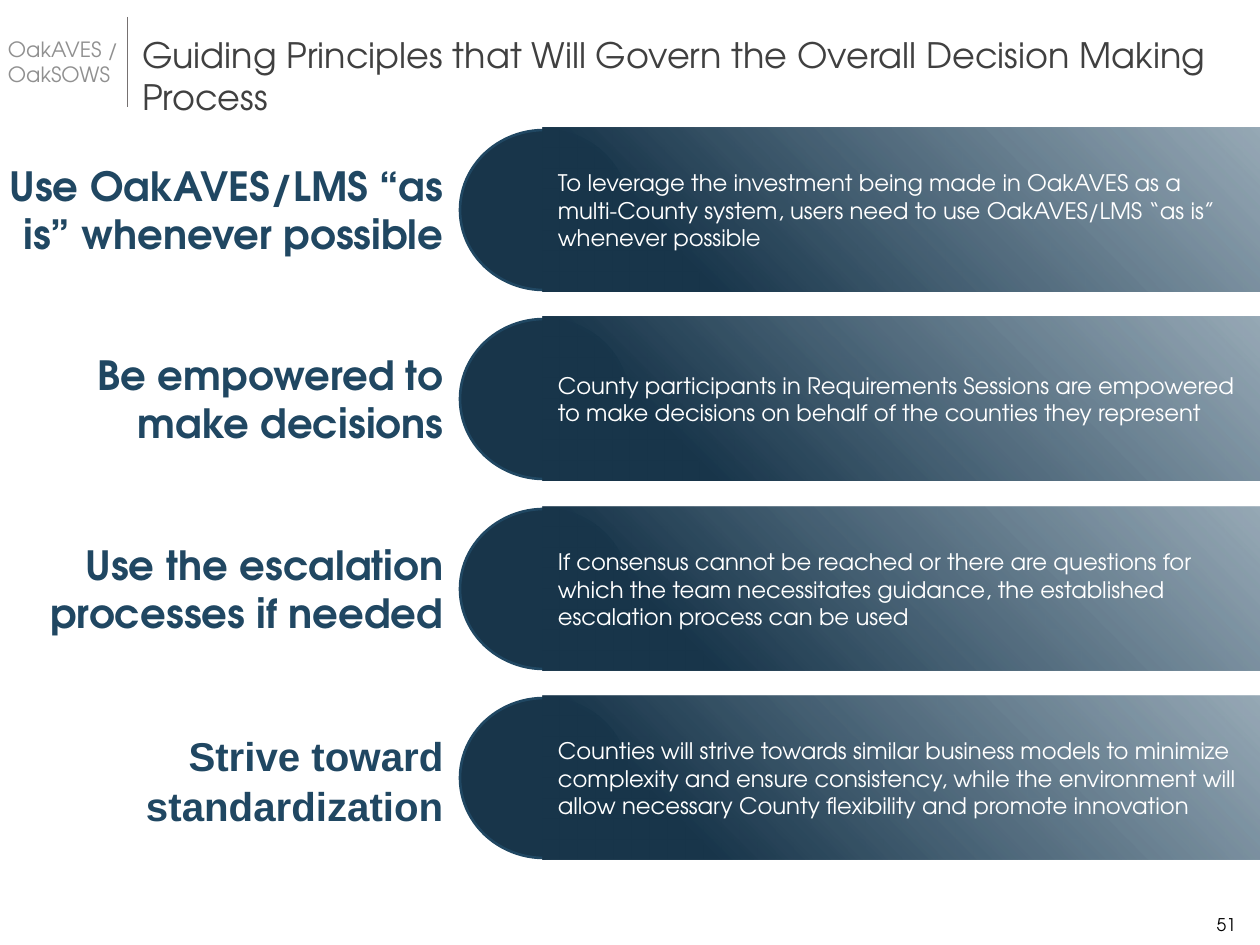
from dataclasses import dataclass

from lxml.etree import SubElement
from pptx import Presentation
from pptx.dml.color import RGBColor
from pptx.enum.shapes import MSO_CONNECTOR, MSO_SHAPE
from pptx.enum.text import MSO_ANCHOR, MSO_AUTO_SIZE, PP_ALIGN
from pptx.oxml import parse_xml
from pptx.oxml.ns import nsdecls, qn
from pptx.util import Pt

EMU_PER_PX = 914400 / 126
MAIN_FONT = "TeX Gyre Adventor"
NAVY, BLUE = "18354A", "204762"
ROW_COUNT = 4
ROW_PITCH = 568 / 3


@dataclass(frozen=True)
class Box:
    left: int
    top: int
    width: int
    height: int

    def emu(self) -> tuple:
        return tuple(px(n) for n in (self.left, self.top, self.width, self.height))

    def lowered(self, distance: int) -> "Box":
        return Box(self.left, self.top + distance, self.width, self.height)


@dataclass(frozen=True)
class Style:
    size: int
    color: str
    font: str = MAIN_FONT
    bold: bool = False
    align: PP_ALIGN = PP_ALIGN.LEFT
    anchor: MSO_ANCHOR = MSO_ANCHOR.TOP
    margins: tuple = (13, 6, 13, 6)
    wrap: bool = True
    line_spacing: float = 1.0


@dataclass(frozen=True)
class Principle:
    heading: str
    detail: str
    font: str = MAIN_FONT
    line_spacing: float = 1.0


PRINCIPLES = [
    Principle(
        "Use OakAVES/LMS “as is” whenever possible",
        "To leverage the investment being made in OakAVES as a multi-County system, "
        "users need to use OakAVES/LMS “as is” whenever possible",
    ),
    Principle(
        "Be empowered to make decisions",
        "County participants in Requirements Sessions are empowered to make "
        "decisions on behalf of the counties they represent",
    ),
    Principle(
        "Use the escalation processes if needed",
        "If consensus cannot be reached or there are questions for which the team "
        "necessitates guidance, the established escalation process can be used",
    ),
    Principle(
        "Strive toward standardization",
        "Counties will strive towards similar business models to minimize complexity "
        "and ensure consistency, while the environment will allow necessary County "
        "flexibility and promote innovation",
        "Arial",
        1.04,
    ),
]


def px(length: int) -> int:
    return round(length * EMU_PER_PX)


def rgb(color: str) -> RGBColor:
    return RGBColor.from_string(color)


def write(shape, lines: list[str], style: Style) -> None:
    frame = shape.text_frame
    left, top, right, bottom = (px(n) for n in style.margins)
    frame_format = {
        "word_wrap": style.wrap,
        "auto_size": MSO_AUTO_SIZE.NONE,
        "vertical_anchor": style.anchor,
        "margin_left": left,
        "margin_top": top,
        "margin_right": right,
        "margin_bottom": bottom,
    }
    for name, value in frame_format.items():
        setattr(frame, name, value)
    frame.text = "\n".join(lines)
    font_format = {"name": style.font, "size": Pt(style.size), "bold": style.bold}
    for para in frame.paragraphs:
        para.alignment = style.align
        para.line_spacing = style.line_spacing
        for span in para.runs:
            for name, value in font_format.items():
                setattr(span.font, name, value)
            span.font.color.rgb = rgb(style.color)


def add_text(page, box: Box, lines: list[str], style: Style) -> None:
    write(page.shapes.add_textbox(*box.emu()), lines, style)


def add_divider(page, x: int, top: int, bottom: int) -> None:
    line = page.shapes.add_connector(
        MSO_CONNECTOR.STRAIGHT, px(x), px(top), px(x), px(bottom)
    )
    line.line.color.rgb = rgb("767171")
    line.line.width = Pt(0.5)
    SubElement(line._element.spPr, qn("a:effectLst"))


def fill_radial(shape) -> None:
    """Fade from solid navy at the bottom left to translucent blue."""
    gradient = parse_xml(
        f'<a:gradFill {nsdecls("a")} rotWithShape="1"><a:gsLst>'
        f'<a:gs pos="19000"><a:srgbClr val="{NAVY}"/></a:gs>'
        f'<a:gs pos="100000"><a:srgbClr val="{BLUE}"><a:alpha val="46000"/></a:srgbClr></a:gs>'
        '</a:gsLst><a:path path="circle"><a:fillToRect t="100000" r="100000"/></a:path>'
        "</a:gradFill>"
    )
    shape._element.spPr.find(qn("a:prstGeom")).addnext(gradient)


def add_principle(page, principle: Principle, offset: int) -> None:
    cap = page.shapes.add_shape(
        MSO_SHAPE.OVAL, *Box(460, 130, 168, 160).lowered(offset).emu()
    )
    cap.shadow.inherit = False
    cap.fill.solid()
    cap.fill.fore_color.rgb = rgb(NAVY)
    cap.line.color.rgb = rgb(BLUE)
    cap.line.width = Pt(1.5)

    panel = page.shapes.add_shape(
        MSO_SHAPE.RECTANGLE, *Box(543, 128, 717, 164).lowered(offset).emu()
    )
    panel.shadow.inherit = False
    panel.line.fill.background()
    fill_radial(panel)
    detail_style = Style(
        13, "FFFFFF", anchor=MSO_ANCHOR.MIDDLE, margins=(15, 9, 15, 9)
    )
    write(panel, [principle.detail], detail_style)

    heading_style = Style(
        23,
        BLUE,
        font=principle.font,
        bold=True,
        align=PP_ALIGN.RIGHT,
        line_spacing=principle.line_spacing,
    )
    heading_box = Box(-10, 155, 467, 111).lowered(offset)
    add_text(page, heading_box, [principle.heading], heading_style)


def main() -> None:
    deck = Presentation()
    deck.slide_width, deck.slide_height = px(1260), px(945)
    page = deck.slides.add_slide(deck.slide_layouts[5])

    title = page.shapes.title
    title.left, title.top, title.width, title.height = Box(142, 33, 1094, 43).emu()
    write(
        title,
        ["Guiding Principles that Will Govern the Overall Decision Making Process"],
        Style(20, "404040", margins=(0, 0, 0, 0)),
    )
    add_divider(page, 127, 17, 107)
    add_text(
        page,
        Box(-5, 30, 147, 63),
        ["OakAVES /", "OakSOWS"],
        Style(12, "909090", anchor=MSO_ANCHOR.MIDDLE),
    )
    for row, principle in enumerate(PRINCIPLES[:ROW_COUNT]):
        add_principle(page, principle, round(row * ROW_PITCH))
    number_style = Style(
        10,
        "000000",
        align=PP_ALIGN.RIGHT,
        anchor=MSO_ANCHOR.BOTTOM,
        margins=(0, 0, 0, 0),
        wrap=False,
    )
    add_text(page, Box(1215, 914, 21, 21), ["51"], number_style)
    deck.save("out.pptx")


if __name__ == "__main__":
    main()
